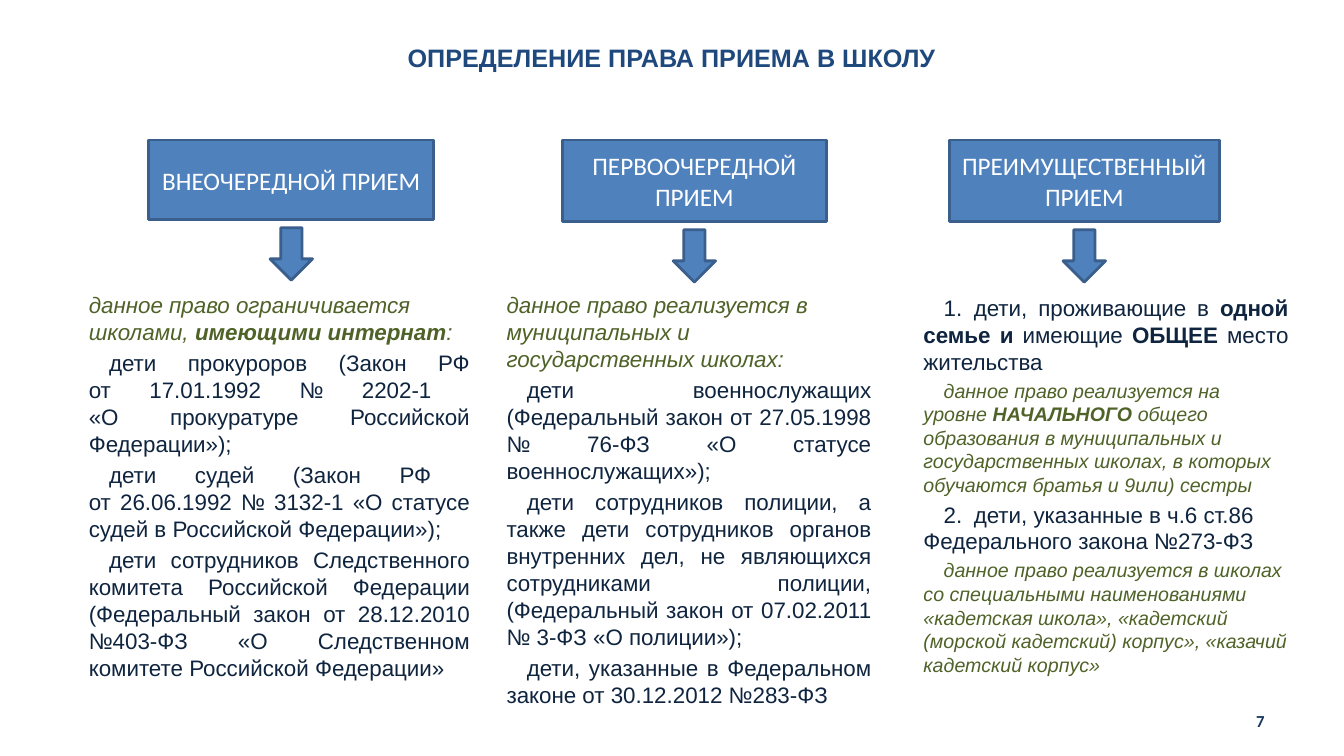
from dataclasses import dataclass

from lxml.etree import SubElement
from pptx import Presentation
from pptx.dml.color import RGBColor
from pptx.enum.shapes import MSO_SHAPE as Form
from pptx.enum.text import MSO_ANCHOR as Anchor, PP_ALIGN as Align
from pptx.oxml.ns import qn
from pptx.util import Cm, Pt

INK = {
    "title": "1F497D", "number": "17375E", "body": "0F243E", "note": "4F6228",
    "fill": "4F81BD", "edge": "3A5F8C", "white": "FFFFFF",
}
BOX_TOP, GAP = 3.53, 0.2
ARROW_W, ARROW_H = 1.07, 1.32
INDENT, TAB = 0.51, 2.54


@dataclass
class Para:
    """Text with *bold* parts; a line feed is a line break."""
    text: str
    ink: str = "body"
    size: int = 16
    align: Align = Align.JUSTIFY
    indent: float = INDENT


@dataclass
class Column:
    head: str
    box: tuple[float, float, float]   # left, width, height
    area: tuple[float, float, float, float]
    paras: list[Para]


COLUMNS = [
    Column("ВНЕОЧЕРЕДНОЙ ПРИЕМ", (3.75, 7.19, 2.01), (1.94, 7.19, 10.21, 11.13), [
        Para("данное право ограничивается школами, *имеющими интернат*:",
             "note", align=Align.LEFT, indent=0),
        Para("дети прокуроров (Закон РФ\nот 17.01.1992 № 2202-1 \n"
             "«О прокуратуре Российской Федерации»);"),
        Para("дети судей (Закон РФ \nот 26.06.1992 № 3132-1 "
             "«О статусе судей в Российской Федерации»);"),
        Para("дети сотрудников Следственного комитета Российской Федерации "
             "(Федеральный закон от 28.12.2010 №403-ФЗ «О Следственном "
             "комитете Российской Федерации»"),
    ]),
    Column("ПЕРВООЧЕРЕДНОЙ ПРИЕМ", (14.18, 6.65, 2.06), (12.47, 7.19, 9.8, 10.97), [
        Para("данное право реализуется в муниципальных и государственных школах:",
             "note", align=Align.LEFT, indent=0),
        Para("дети военнослужащих (Федеральный закон от 27.05.1998 № 76-ФЗ "
             "«О статусе военнослужащих»);"),
        Para("дети сотрудников полиции, а также дети сотрудников органов "
             "внутренних дел, не являющихся сотрудниками полиции, "
             "(Федеральный закон от 07.02.2011 № 3-ФЗ «О полиции»);"),
        Para("дети, указанные в Федеральном законе от 30.12.2012 №283-ФЗ"),
    ]),
    Column("ПРЕИМУЩЕСТВЕННЫЙ ПРИЕМ", (23.93, 6.81, 2.06), (22.98, 7.26, 9.8, 10.97), [
        Para("1.\tдети, проживающие в *одной семье и *имеющие* ОБЩЕЕ *"
             "место жительства"),
        Para("данное право реализуется на уровне *НАЧАЛЬНОГО* общего "
             "образования в муниципальных и государственных школах, в которых "
             "обучаются братья и 9или) сестры", "note", 14, Align.LEFT),
        Para("2.\tдети, указанные в ч.6 ст.86 Федерального закона №273-ФЗ",
             align=Align.LEFT),
        Para("данное право реализуется в школах со специальными "
             "наименованиями «кадетская школа», «кадетский (морской кадетский) "
             "корпус», «казачий кадетский корпус»", "note", 14, Align.LEFT),
    ]),
]


def style(font, face: str, size: int, ink: str, bold=False, italic=False) -> None:
    font.name, font.size = face, Pt(size)
    font.bold, font.italic = bold, italic
    font.color.rgb = RGBColor.from_string(INK[ink])


def add_frame(slide, area, inset=(0.3, 0.15), anchor=Anchor.TOP):
    """Add a wrapping text box and return its text frame."""
    frame = slide.shapes.add_textbox(*map(Cm, area)).text_frame
    frame.word_wrap = True
    frame.vertical_anchor = anchor
    frame.margin_left = frame.margin_right = Cm(inset[0])
    frame.margin_top = frame.margin_bottom = Cm(inset[1])
    return frame


def add_label(frame, text: str, align, face: str, size: int, ink: str, bold=False):
    frame.text = text
    para = frame.paragraphs[0]
    para.alignment = align
    style(para.runs[0].font, face, size, ink, bold)


def add_block(slide, form, left: float, top: float, width: float, height: float):
    block = slide.shapes.add_shape(form, *map(Cm, (left, top, width, height)))
    block.shadow.inherit = False
    block.fill.solid()
    block.fill.fore_color.rgb = RGBColor.from_string(INK["fill"])
    block.line.color.rgb = RGBColor.from_string(INK["edge"])
    block.line.width = Pt(2)
    return block


def fill_para(para, item: Para) -> None:
    para.alignment = item.align
    props = para._p.get_or_add_pPr()
    props.set("marL", "0")
    props.set("indent", str(Cm(item.indent)))
    if "\t" in item.text:
        stop = SubElement(SubElement(props, qn("a:tabLst")), qn("a:tab"))
        stop.set("pos", str(Cm(TAB)))
        stop.set("algn", "l")
    for i, part in enumerate(item.text.split("*")):
        for j, line in enumerate(part.split("\n")):
            if j:
                para.add_line_break()
            run = para.add_run()
            run.text = line
            style(run.font, "Arial", item.size, item.ink, i % 2 == 1,
                  item.ink == "note")
    # Breaks take the text size, so they do not stretch their lines
    for gap in para._p.findall(qn("a:br")):
        SubElement(gap, qn("a:rPr")).set("sz", str(item.size * 100))


def add_column(slide, col: Column) -> None:
    left, width, height = col.box
    box = add_block(slide, Form.RECTANGLE, left, BOX_TOP, width, height)
    box.text_frame.word_wrap = True
    box.text_frame.vertical_anchor = Anchor.MIDDLE
    add_label(box.text_frame, col.head, Align.CENTER, "Calibri", 18, "white")
    add_block(slide, Form.DOWN_ARROW, left + (width - ARROW_W) / 2,
              BOX_TOP + height + GAP, ARROW_W, ARROW_H)

    frame = add_frame(slide, col.area)
    for i, item in enumerate(col.paras):
        para = frame.add_paragraph() if i else frame.paragraphs[0]
        fill_para(para, item)
        if i:
            para.space_before = Pt(item.size * 0.2)


def main() -> None:
    deck = Presentation()
    deck.slide_width, deck.slide_height = Cm(33.88), Cm(19.05)
    slide = deck.slides.add_slide(deck.slide_layouts[6])
    title = add_frame(slide, (-0.02, 0.9, 33.9, 1.12), (0.33, 0.17))
    add_label(title, "ОПРЕДЕЛЕНИЕ ПРАВА ПРИЕМА В ШКОЛУ", Align.CENTER,
              "Arial", 18, "title", True)
    for col in COLUMNS:
        add_column(slide, col)
    number = add_frame(slide, (24.28, 17.65, 7.9, 1.02), anchor=Anchor.MIDDLE)
    add_label(number, "7", Align.RIGHT, "Calibri", 12, "number", True)
    deck.save("out.pptx")


if __name__ == "__main__":
    main()
